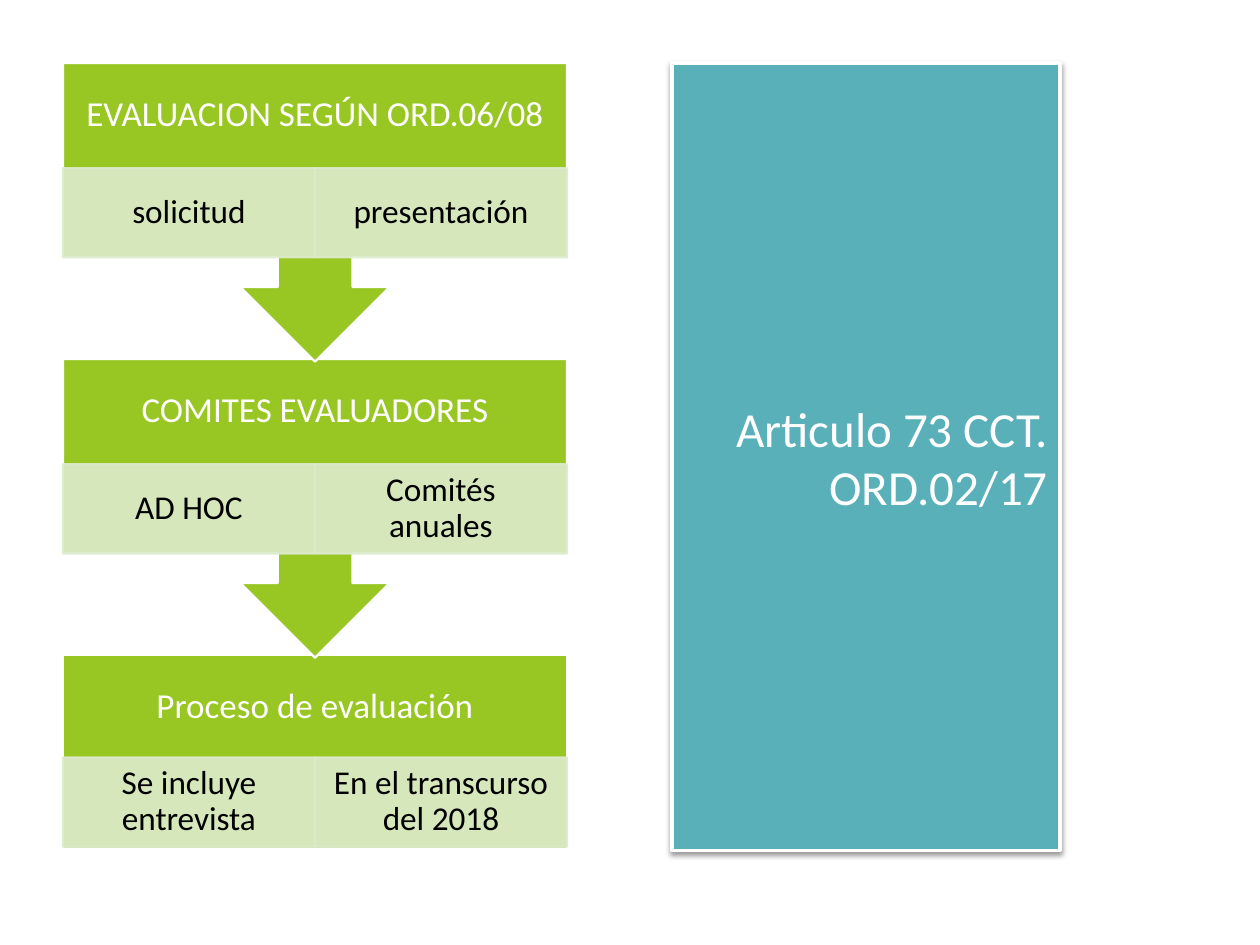
from lxml import etree
from pptx import Presentation
from pptx.dml.color import RGBColor
from pptx.enum.shapes import MSO_SHAPE
from pptx.enum.text import MSO_ANCHOR, PP_ALIGN
from pptx.oxml.ns import qn
from pptx.util import Cm, Pt

GREEN = RGBColor(0x98, 0xC7, 0x23)
PALE_GREEN = RGBColor(0xDD, 0xEB, 0xCD)
TEAL = RGBColor(0x59, 0xB0, 0xB9)
WHITE = RGBColor(0xFF, 0xFF, 0xFF)
BLACK = RGBColor(0x00, 0x00, 0x00)

RECTANGLE = MSO_SHAPE.RECTANGLE
ARROW_CALLOUT = MSO_SHAPE.UP_ARROW_CALLOUT
MIDDLE = MSO_ANCHOR.MIDDLE
CENTER = PP_ALIGN.CENTER
RIGHT = PP_ALIGN.RIGHT

STAGES = [
    ("EVALUACION SEGÚN ORD.06/08", ["solicitud", "presentación"]),
    ("COMITES EVALUADORES", ["AD HOC", "Comités anuales"]),
    ("Proceso de evaluación", ["Se incluye entrevista", "En el transcurso del 2018"]),
]


def add_block(slide, kind, box, fill, line, line_width):
    shape = slide.shapes.add_shape(kind, *box)
    shape.shadow.inherit = False
    shape.fill.solid()
    shape.fill.fore_color.rgb = fill
    shape.line.color.rgb = line
    shape.line.width = Pt(line_width)
    return shape


def write_text(shape, text, size, color, alignment, inset_x, inset_y, spacing):
    frame = shape.text_frame
    frame.word_wrap = True
    frame.vertical_anchor = MIDDLE
    frame.margin_left = frame.margin_right = inset_x
    frame.margin_top = frame.margin_bottom = inset_y
    frame.text = text
    paragraph = frame.paragraphs[0]
    paragraph.alignment = alignment
    paragraph.line_spacing = spacing
    for run in paragraph.runs:
        run.font.name = "Calibri"
        run.font.size = Pt(size)
        run.font.color.rgb = color


def set_opacity(shape, percent):
    for color in shape._element.spPr.iter(qn("a:srgbClr")):
        etree.SubElement(color, qn("a:alpha"), val=str(percent * 1000))


def add_drop_shadow(shape):
    effects = shape._element.spPr.find(qn("a:effectLst"))
    shadow = etree.SubElement(
        effects, qn("a:outerShdw"), blurRad=str(Pt(3.1)), dist=str(Pt(1.6)),
        dir="5400000", rotWithShape="0")
    color = etree.SubElement(shadow, qn("a:srgbClr"), val=str(BLACK))
    etree.SubElement(color, qn("a:alpha"), val="38000")


def add_stage(slide, box, heading, details, is_last):
    left, top, width, height = box
    kind = RECTANGLE if is_last else ARROW_CALLOUT
    block = add_block(slide, kind, box, GREEN, WHITE, 1.25)
    if not is_last:
        block.rotation = 180

    label = slide.shapes.add_textbox(left, top, width, Cm(2.11))
    write_text(label, heading, 20, WHITE, CENTER, Cm(0.41), Cm(0.41), 0.9)

    cell_top = top + (Cm(2.06) if is_last else Cm(2.12))
    cell_width = width // len(details)
    for column, detail in enumerate(details):
        cell_box = (left + column * cell_width, cell_top, cell_width, Cm(1.8))
        cell = add_block(slide, RECTANGLE, cell_box, PALE_GREEN, PALE_GREEN, 1.25)
        set_opacity(cell, 90)
        write_text(cell, detail, 19, BLACK, CENTER, Cm(0.38), Cm(0.08), 0.9)


def add_process(slide, left, top, width):
    pitch = Cm(5.97)
    last = len(STAGES) - 1
    for row in range(last, -1, -1):
        heading, details = STAGES[row]
        height = Cm(3.91) if row == last else Cm(6.02)
        box = (left, top + row * pitch, width, height)
        add_stage(slide, box, heading, details, row == last)


def add_title_panel(slide, box):
    panel = add_block(slide, RECTANGLE, box, TEAL, WHITE, 2)
    add_drop_shadow(panel)
    write_text(panel, "Articulo 73 CCT. ORD.02/17", 28, WHITE, RIGHT,
               Cm(0.25), Cm(0.13), 1.0)


def main():
    presentation = Presentation()
    presentation.slide_width = Cm(25.4)
    presentation.slide_height = Cm(19.05)
    slide = presentation.slides.add_slide(presentation.slide_layouts[6])
    add_process(slide, Cm(1.27), Cm(1.27), Cm(10.16))
    add_title_panel(slide, (Cm(13.55), Cm(1.27), Cm(7.82), Cm(15.88)))
    presentation.save("out.pptx")


if __name__ == "__main__":
    main()
